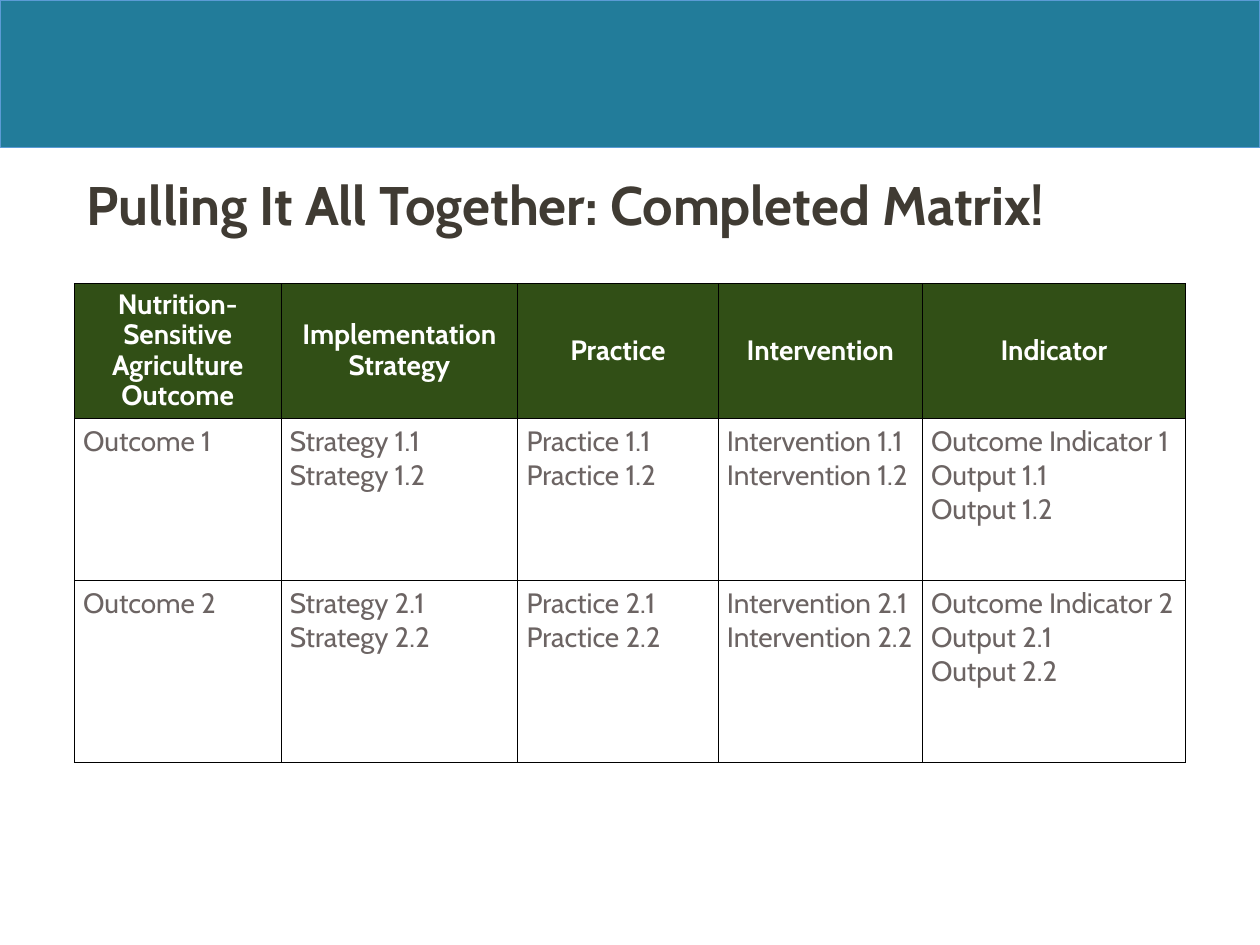
import pptx
import pptx.dml.color
import pptx.enum.shapes
import pptx.enum.text
import pptx.oxml
import pptx.oxml.ns
import pptx.util
from dataclasses import dataclass

Inches = pptx.util.Inches
Pt = pptx.util.Pt
ALIGN = pptx.enum.text.PP_ALIGN
ANCHOR = pptx.enum.text.MSO_ANCHOR


@dataclass(frozen=True)
class Theme:
    font: str = "Cabin"
    band: str = "227C9A"
    band_line: str = "5B9BD5"
    title: str = "403B33"
    header_fill: str = "314F16"
    header_text: str = "FFFFFF"
    body_text: str = "6C6463"
    border: str = "000000"
    title_size: int = 31
    table_size: int = 16
    line_width: float = 0.5


THEME = Theme()
HEADERS = ["Nutrition-Sensitive Agriculture Outcome", "Implementation Strategy",
           "Practice", "Intervention", "Indicator"]
COLUMN_WIDTHS = [1.64, 1.88, 1.59, 1.62, 2.09]
ROW_HEIGHTS = [1.07, 1.29, 1.44]

TITLE_FONT = {"name": THEME.font, "size": Pt(THEME.title_size), "bold": True}
HEADER_FONT = {"name": THEME.font, "size": Pt(THEME.table_size), "bold": True}
BODY_FONT = {**HEADER_FONT, "bold": False}
HEADER_PARAGRAPH = {"alignment": ALIGN.CENTER, "line_spacing": 0.9, "space_after": Pt(10)}
BODY_PARAGRAPH = {"alignment": ALIGN.LEFT}
CELL_MARGINS = {"margin_left": Inches(0.07), "margin_right": Inches(0.07),
                "margin_top": Inches(0.05), "margin_bottom": Inches(0.05)}


def color(value):
    return pptx.dml.color.RGBColor.from_string(value)


def apply(target, values):
    for name, value in values.items():
        setattr(target, name, value)


def write_text(text_frame, lines, paragraph_format, font_format, text_color):
    text_frame.text = "\n".join(lines)
    for paragraph in text_frame.paragraphs:
        apply(paragraph, paragraph_format)
        for run in paragraph.runs:
            apply(run.font, font_format)
            run.font.color.rgb = color(text_color)


def add_band(slide):
    band = slide.shapes.add_shape(pptx.enum.shapes.MSO_SHAPE.RECTANGLE,
                                  0, 0, Inches(10), Inches(1.17))
    band.shadow.inherit = False
    band.fill.solid()
    band.fill.fore_color.rgb = color(THEME.band)
    band.line.color.rgb = color(THEME.band_line)
    band.line.width = Pt(THEME.line_width)


def place_title(slide, text):
    title = slide.shapes.title
    apply(title, {"left": Inches(0.59), "top": Inches(1.37),
                  "width": Inches(9.09), "height": Inches(1.2)})
    apply(title.text_frame, {"word_wrap": True, "vertical_anchor": ANCHOR.TOP,
                             "auto_size": pptx.enum.text.MSO_AUTO_SIZE.NONE})
    write_text(title.text_frame, [text], {"alignment": ALIGN.LEFT, "line_spacing": 0.9},
               TITLE_FONT, THEME.title)


def add_borders(cell):
    properties = cell._tc.get_or_add_tcPr()
    for side in ("lnL", "lnR", "lnT", "lnB"):
        properties.append(pptx.oxml.parse_xml(
            f'<a:{side} {pptx.oxml.ns.nsdecls("a")} w="{Pt(THEME.line_width)}">'
            f'<a:solidFill><a:srgbClr val="{THEME.border}"/></a:solidFill></a:{side}>'))


def fill_cell(cell, lines, is_header):
    add_borders(cell)
    apply(cell, CELL_MARGINS)
    if is_header:
        cell.vertical_anchor = ANCHOR.MIDDLE
        cell.fill.solid()
        cell.fill.fore_color.rgb = color(THEME.header_fill)
        write_text(cell.text_frame, lines, HEADER_PARAGRAPH, HEADER_FONT, THEME.header_text)
    else:
        cell.vertical_anchor = ANCHOR.TOP
        cell.fill.background()
        write_text(cell.text_frame, lines, BODY_PARAGRAPH, BODY_FONT, THEME.body_text)


def outcome_row(number):
    def numbered(label):
        return [f"{label} {number}.{item}" for item in (1, 2)]

    return [[f"Outcome {number}"], numbered("Strategy"), numbered("Practice"),
            numbered("Intervention"), [f"Outcome Indicator {number}"] + numbered("Output")]


def add_matrix(slide):
    rows = [[[header] for header in HEADERS], outcome_row(1), outcome_row(2)]
    table = slide.shapes.add_table(
        len(rows), len(HEADERS), Inches(0.59), Inches(2.25),
        Inches(sum(COLUMN_WIDTHS)), Inches(sum(ROW_HEIGHTS))).table
    apply(table, {"first_row": False, "horz_banding": False})
    for column, width in zip(table.columns, COLUMN_WIDTHS):
        column.width = Inches(width)
    for row, height in zip(table.rows, ROW_HEIGHTS):
        row.height = Inches(height)
    for row_index, row in enumerate(rows):
        for column_index, lines in enumerate(row):
            fill_cell(table.cell(row_index, column_index), lines, row_index == 0)


def main():
    presentation = pptx.Presentation()
    apply(presentation, {"slide_width": Inches(10), "slide_height": Inches(7.5)})
    # Title Only layout
    slide = presentation.slides.add_slide(presentation.slide_layouts[5])
    # Top band and heading
    add_band(slide)
    place_title(slide, "Pulling It All Together: Completed Matrix!")
    # Outcome matrix
    add_matrix(slide)
    presentation.save("out.pptx")


if __name__ == "__main__":
    main()
